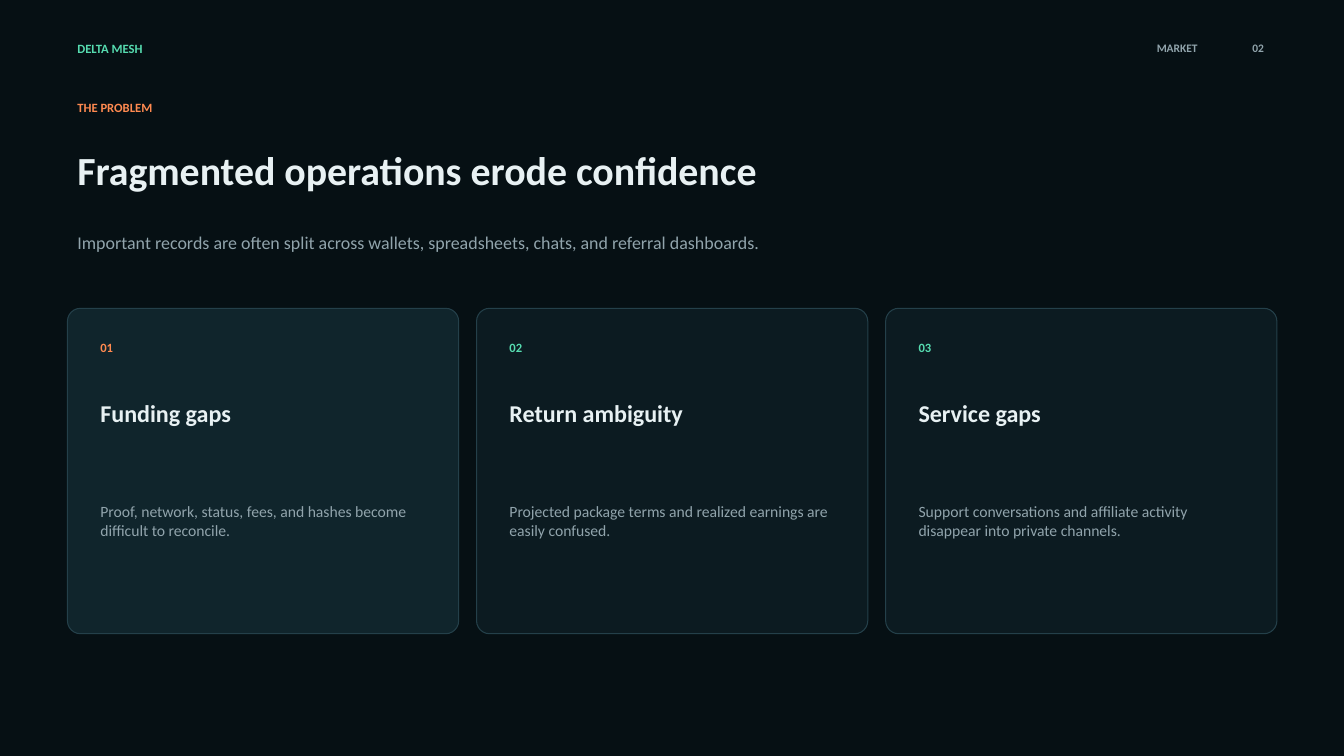
from pptx import Presentation
from pptx.dml.color import RGBColor
from pptx.enum.shapes import MSO_SHAPE
from pptx.enum.text import MSO_ANCHOR, PP_ALIGN
from pptx.util import Cm, Pt

BACKGROUND = RGBColor(0x06, 0x10, 0x14)
CARD = RGBColor(0x0C, 0x1B, 0x21)
CARD_ACTIVE = RGBColor(0x10, 0x25, 0x2C)
BORDER = RGBColor(0x24, 0x40, 0x4A)
GREEN = RGBColor(0x56, 0xDC, 0xB0)
ORANGE = RGBColor(0xFF, 0x8A, 0x50)
WHITE = RGBColor(0xE8, 0xF1, 0xF3)
GREY = RGBColor(0x91, 0xA4, 0xAC)

STYLES = {
    "brand": {"size": Pt(9), "bold": True, "color": GREEN},
    "label": {"size": Pt(9), "bold": True, "color": ORANGE},
    "page": {"size": Pt(8.2), "bold": True, "color": GREY},
    "title": {"size": Pt(28.5), "bold": True, "color": WHITE},
    "subtitle": {"size": Pt(12.8), "bold": False, "color": GREY},
    "card_title": {"size": Pt(17.2), "bold": True, "color": WHITE},
    "card_body": {"size": Pt(11.2), "bold": False, "color": GREY},
}

# text, style, alignment, (left, top, width, height) in cm
HEADER = [
    ("DELTA MESH", "brand", PP_ALIGN.LEFT, (1.7, 0.89, 6.1, 0.64)),
    ("MARKET", "page", PP_ALIGN.RIGHT, (23.29, 0.89, 7.14, 0.64)),
    ("02", "page", PP_ALIGN.RIGHT, (30.68, 0.89, 1.42, 0.64)),
    ("THE PROBLEM", "label", PP_ALIGN.LEFT, (1.7, 2.39, 9.53, 0.64)),
    ("Fragmented operations erode confidence", "title", PP_ALIGN.LEFT,
     (1.7, 3.23, 29.11, 2.11)),
    ("Important records are often split across wallets, spreadsheets, chats, "
     "and referral dashboards.", "subtitle", PP_ALIGN.LEFT,
     (1.7, 5.38, 28.58, 1.45)),
]

# title, body, fill, style of the number
CARDS = [
    ("Funding gaps",
     "Proof, network, status, fees, and hashes become difficult to reconcile.",
     CARD_ACTIVE, "label"),
    ("Return ambiguity",
     "Projected package terms and realized earnings are easily confused.",
     CARD, "brand"),
    ("Service gaps",
     "Support conversations and affiliate activity disappear into private channels.",
     CARD, "brand"),
]
CARD_LEFT, CARD_TOP, CARD_WIDTH, CARD_HEIGHT = 1.7, 7.77, 9.86, 8.2
CARD_GAP = 0.45
CARD_PAD = 0.58
INNER_WIDTH = CARD_WIDTH - 2 * CARD_PAD


def add_text(s, text, style, align, box):
    tf = s.shapes.add_textbox(*map(Cm, box)).text_frame
    tf.word_wrap = True
    tf.vertical_anchor = MSO_ANCHOR.MIDDLE
    p = tf.paragraphs[0]
    p.alignment = align
    r = p.add_run()
    r.text = text
    r.font.name = "Calibri"
    for key, value in STYLES[style].items():
        if key == "color":
            r.font.color.rgb = value
        else:
            setattr(r.font, key, value)


def add_card(s, index, title, body, fill, number_style):
    left = CARD_LEFT + index * (CARD_WIDTH + CARD_GAP)
    sp = s.shapes.add_shape(MSO_SHAPE.ROUNDED_RECTANGLE, Cm(left), Cm(CARD_TOP),
                            Cm(CARD_WIDTH), Cm(CARD_HEIGHT))
    sp.adjustments[0] = 0.04
    sp.shadow.inherit = False
    sp.fill.solid()
    sp.fill.fore_color.rgb = fill
    sp.line.color.rgb = BORDER
    sp.line.width = Pt(0.75)
    for text, style, top, width, height in (
        (f"{index + 1:02}", number_style, 8.38, 1.57, 0.74),
        (title, "card_title", 9.58, INNER_WIDTH, 1.65),
        (body, "card_body", 11.58, INNER_WIDTH, 3.07),
    ):
        add_text(s, text, style, PP_ALIGN.LEFT,
                 (left + CARD_PAD, top, width, height))


def main():
    prs = Presentation()
    prs.slide_width, prs.slide_height = Cm(33.87), Cm(19.05)
    s = prs.slides.add_slide(prs.slide_layouts[6])
    s.background.fill.solid()
    s.background.fill.fore_color.rgb = BACKGROUND
    for item in HEADER:
        add_text(s, *item)
    for index, card in enumerate(CARDS):
        add_card(s, index, *card)
    prs.save("out.pptx")


if __name__ == "__main__":
    main()
